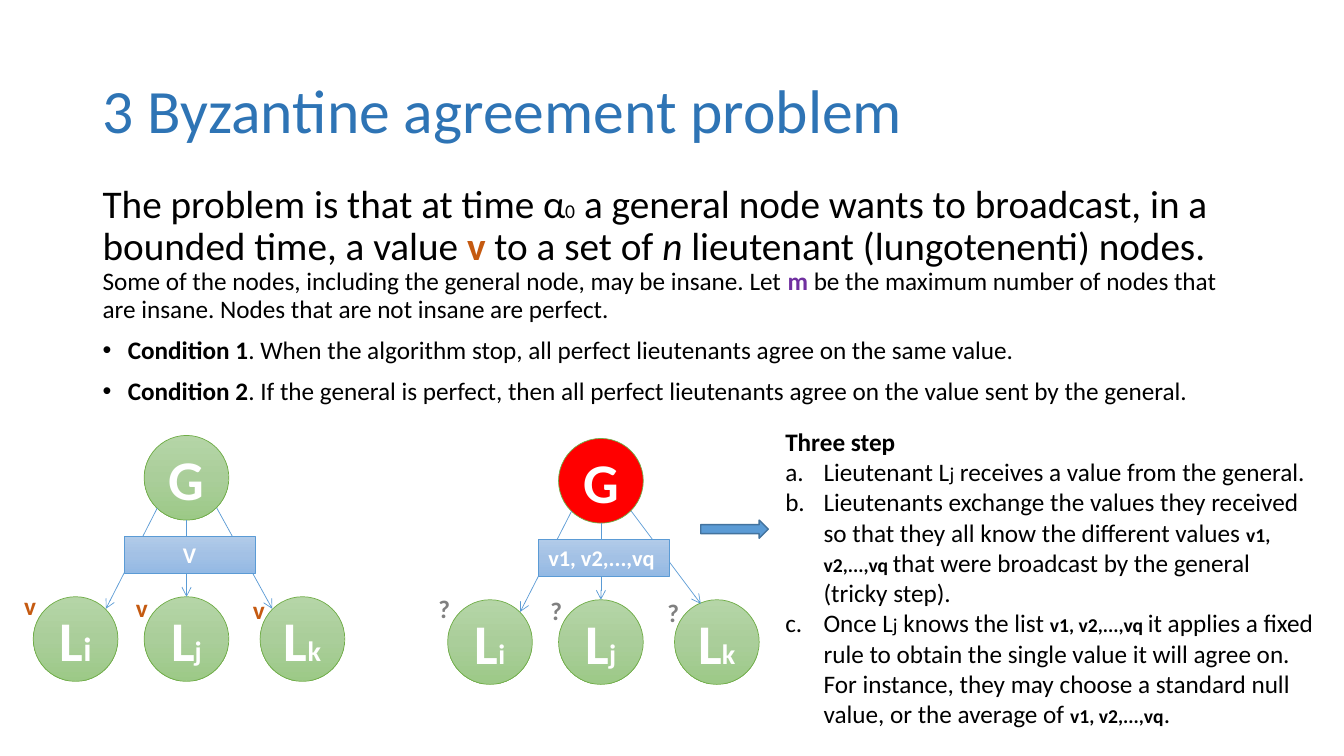
from copy import deepcopy
from dataclasses import dataclass

from lxml.etree import SubElement
from pptx import Presentation
from pptx.dml.color import RGBColor
from pptx.enum.shapes import MSO_CONNECTOR, MSO_SHAPE
from pptx.enum.text import MSO_ANCHOR, PP_ALIGN
from pptx.oxml.ns import qn
from pptx.util import Inches, Pt


@dataclass(frozen=True)
class Theme:
    font: str = "Calibri"
    title: str = "2E74B5"
    black: str = "000000"
    white: str = "FFFFFF"
    orange: str = "C55A11"
    purple: str = "7030A0"
    grey: str = "808080"
    blue: str = "5B9BD5"
    dark_blue: str = "43739E"
    green: str = "70AD47"
    node: tuple = ("B5D5A7", "AACE9A", "9CC987")
    message: tuple = ("B1CBE9", "A3C1E5", "93B9E4")
    traitor: tuple = ("FF0000",)
    title_size: int = 44
    node_size: int = 40
    lead_size: int = 28
    index_size: int = 20
    body_size: int = 18
    message_size: int = 16
    small_size: int = 14


THEME = Theme()


@dataclass(frozen=True)
class Span:
    text: str
    size: float = THEME.body_size
    color: str = THEME.black
    bold: bool = False
    italic: bool = False


@dataclass(frozen=True)
class Para:
    spans: tuple
    bullet: str = ""
    indent: float = 0


@dataclass(frozen=True)
class Tree:
    left: float
    top: float
    general_fill: tuple
    message: str
    message_align: PP_ALIGN
    mark: str
    mark_color: str
    first_index_size: int
    right_tip: tuple


def write(frame, paras, *, align=PP_ALIGN.LEFT, anchor=MSO_ANCHOR.TOP,
          wrap=True, line_spacing=1.0, space_before=0) -> None:
    """Fill a text frame with formatted paragraphs."""
    frame.word_wrap = wrap
    frame.vertical_anchor = anchor
    for number, para in enumerate(paras):
        line = frame.paragraphs[0] if number == 0 else frame.add_paragraph()
        line.alignment = align
        line.line_spacing = line_spacing
        line.space_before = Pt(space_before)
        if para.bullet:
            properties = line._p.get_or_add_pPr()
            properties.set("marL", str(Inches(para.indent)))
            properties.set("indent", str(-Inches(para.indent)))
            if para.bullet == "•":
                SubElement(properties, qn("a:buFont"), typeface="Arial")
                SubElement(properties, qn("a:buChar"), char="•")
            else:
                SubElement(properties, qn("a:buAutoNum"), type=para.bullet)
        for span in para.spans:
            run = line.add_run()
            run.text = span.text
            run.font.name = THEME.font
            run.font.size = Pt(span.size)
            run.font.bold = span.bold
            run.font.italic = span.italic
            run.font.color.rgb = RGBColor.from_string(span.color)


def add_text(page, left: float, top: float, width: float, height: float,
             paras, **text_format) -> None:
    box = page.shapes.add_textbox(
        Inches(left), Inches(top), Inches(width), Inches(height))
    write(box.text_frame, paras, **text_format)


def add_box(page, kind, left: float, top: float, width: float, height: float,
            colors: tuple, outline: str, line_width: float = 0.5,
            spans: tuple = (), **text_format) -> None:
    """Add a shape with a solid fill, or a downward gradient of three colours."""
    box = page.shapes.add_shape(
        kind, Inches(left), Inches(top), Inches(width), Inches(height))
    box.shadow.inherit = False
    box.line.color.rgb = RGBColor.from_string(outline)
    box.line.width = Pt(line_width)
    if len(colors) == 1:
        box.fill.solid()
        box.fill.fore_color.rgb = RGBColor.from_string(colors[0])
    else:
        box.fill.gradient()
        box.fill.gradient_angle = 270
        stop_list = next(box._element.spPr.iter(qn("a:gsLst")))
        stop_list.insert(1, deepcopy(stop_list[0]))
        for stop, color, position in zip(box.fill.gradient_stops, colors, (0, 0.5, 1)):
            stop.color.rgb = RGBColor.from_string(color)
            stop.position = position
    if spans:
        write(box.text_frame, (Para(spans),), **text_format)


def add_arrow(page, start: tuple, end: tuple) -> None:
    arrow = page.shapes.add_connector(
        MSO_CONNECTOR.STRAIGHT, *(Inches(value) for value in (*start, *end)))
    arrow.line.color.rgb = RGBColor.from_string(THEME.blue)
    arrow.line.width = Pt(0.5)
    SubElement(arrow.line._get_or_add_ln(), qn("a:tailEnd"), type="arrow")
    SubElement(arrow._element.spPr, qn("a:effectLst"))


def add_node(page, left: float, top: float, colors: tuple, letter: str,
             index: str = "", index_size: int = THEME.index_size) -> None:
    spans = [Span(letter, THEME.node_size, THEME.white, True)]
    if index:
        spans.append(Span(index, index_size, THEME.white, True))
    add_box(page, MSO_SHAPE.FLOWCHART_CONNECTOR, left, top, 0.84, 0.84, colors,
            THEME.green, spans=tuple(spans), align=PP_ALIGN.CENTER,
            anchor=MSO_ANCHOR.MIDDLE, wrap=False)


def add_tree(page, tree: Tree) -> None:
    """Draw a general, the message and three lieutenants."""
    left, top = tree.left, tree.top
    add_node(page, left + 1.1, top, tree.general_fill, "G")
    sizes = (tree.first_index_size, THEME.index_size, THEME.index_size)
    for offset, index, size in zip((0, 1.1, 2.25), "ijk", sizes):
        add_node(page, left + offset, top + 1.6, THEME.node, "L", index, size)
    for start, end in (((1.23, 0.72), (0.72, 1.72)),
                       ((1.52, 0.84), (1.52, 1.6)),
                       ((1.82, 0.72), tree.right_tip)):
        add_arrow(page, (left + start[0], top + start[1]),
                  (left + end[0], top + end[1]))
    add_box(page, MSO_SHAPE.RECTANGLE, left + 0.9, top + 1, 1.3, 0.37,
            THEME.message, THEME.blue,
            spans=(Span(tree.message, THEME.message_size, THEME.white, True),),
            align=tree.message_align)
    for x, y in ((-0.19, 1.49), (0.92, 1.51), (2.08, 1.53)):
        mark = Span(tree.mark, color=tree.mark_color, bold=True)
        add_text(page, left + x, top + y, 0.32, 0.4, (Para((mark,)),), wrap=False)


TITLE = Para((Span("3 Byzantine agreement problem", THEME.title_size, THEME.title),))
LEAD = THEME.lead_size
BODY = (
    Para((
        Span("The problem is that at time α", LEAD),
        Span("0", THEME.small_size),
        Span(" a general node wants to broadcast, in a bounded time, a value ", LEAD),
        Span("v ", LEAD, THEME.orange, True),
        Span("to a set of ", LEAD),
        Span("n ", LEAD, italic=True),
        Span("lieutenant (lungotenenti) nodes. ", LEAD),
        Span("Some of the nodes, including the general node, may be insane. Let "),
        Span("m ", color=THEME.purple, bold=True),
        Span("be the maximum number of nodes that are insane. "
             "Nodes that are not insane are perfect."))),
    Para((Span("Condition 1", bold=True),
          Span(". When the algorithm stop, all perfect lieutenants agree on the "
               "same value.")), "•", 0.25),
    Para((Span("Condition 2", bold=True),
          Span(". If the general is perfect, then all perfect lieutenants agree "
               "on the value sent by the general.")), "•", 0.25),
)
VALUES = "v1, v2,...,vq"
INDEX_J = Span("j", THEME.small_size)
VALUE_LIST = Span(VALUES + " ", THEME.small_size, bold=True)
STEPS = (
    (Span("Lieutenant L"), INDEX_J, Span(" receives a value from the general.")),
    (Span("Lieutenants exchange the values they received so that they all know "
          "the different values "), VALUE_LIST,
     Span("that were broadcast by the general (tricky step).")),
    (Span("Once L"), INDEX_J, Span(" knows the list "), VALUE_LIST,
     Span("it applies a fixed rule to obtain the single value it will agree on. "
          "For instance, they may choose a standard null value, or the average of "),
     Span(VALUES, THEME.small_size, bold=True), Span(".")),
)
TREES = (
    Tree(0.33, 4.32, THEME.node, "V", PP_ALIGN.CENTER, "v", THEME.orange, 24, (2.37, 1.72)),
    Tree(4.44, 4.35, THEME.traitor, VALUES, PP_ALIGN.LEFT, "?", THEME.grey, 20, (2.51, 1.64)),
)


def main() -> None:
    deck = Presentation()
    deck.slide_width, deck.slide_height = Inches(13.33), Inches(7.5)
    page = deck.slides.add_slide(deck.slide_layouts[6])
    # Title and problem statement
    add_text(page, 0.92, 0.4, 11.5, 1.45, (TITLE,), anchor=MSO_ANCHOR.MIDDLE,
             line_spacing=0.9)
    add_text(page, 0.92, 1.78, 11.5, 4.76, BODY, line_spacing=0.9, space_before=10)
    # Loyal and insane generals
    for tree in TREES:
        add_tree(page, tree)
    # Steps of the agreement
    steps = [Para(spans, "alphaLcPeriod", 0.38) for spans in STEPS]
    add_text(page, 7.69, 4.18, 5.5, 3.13,
             (Para((Span("Three step", bold=True),)), *steps))
    add_box(page, MSO_SHAPE.RIGHT_ARROW, 6.95, 5.16, 0.67, 0.18,
            (THEME.blue,), THEME.dark_blue, 1)
    deck.save("out.pptx")


if __name__ == "__main__":
    main()
